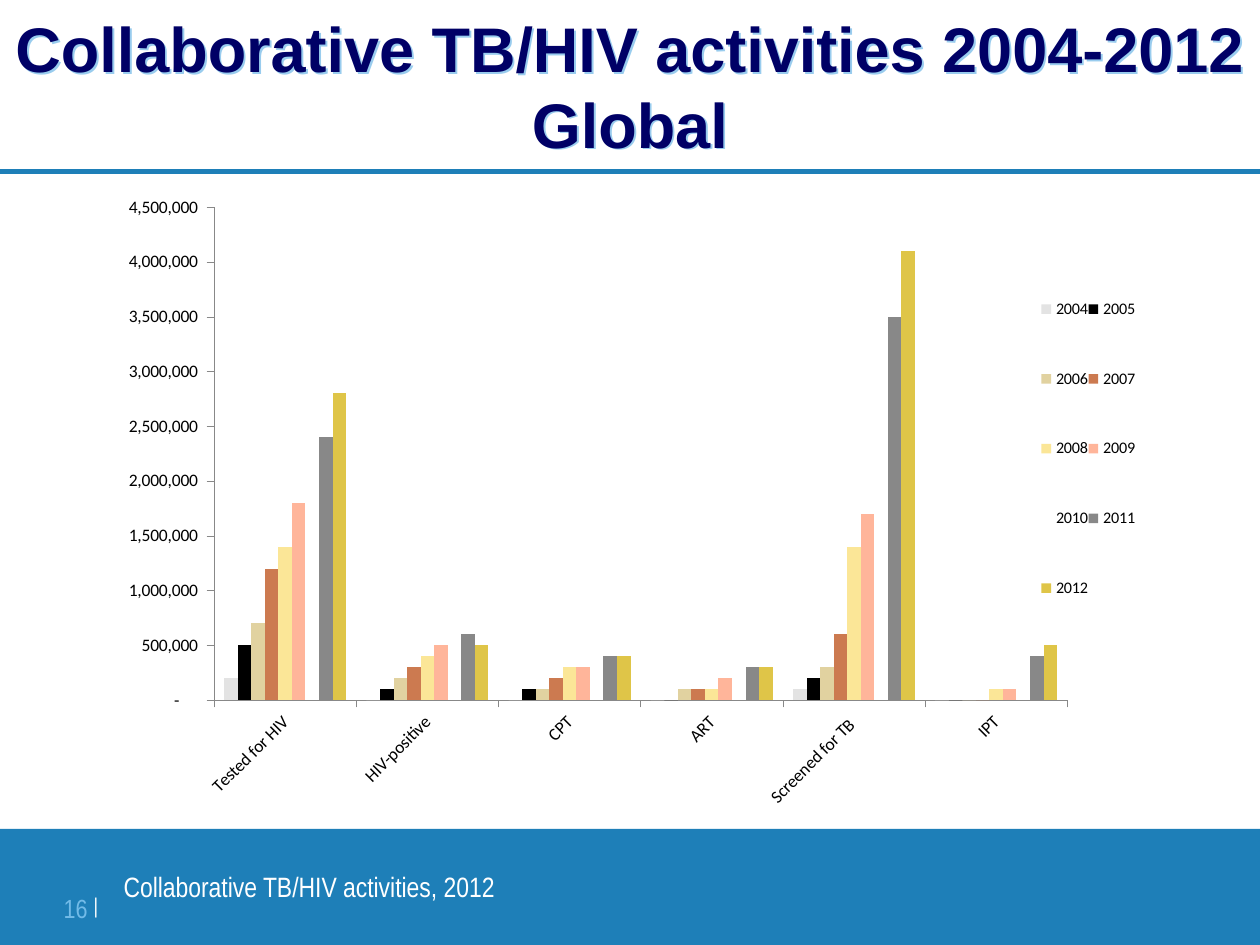
from dataclasses import dataclass
from typing import NamedTuple

from lxml.etree import SubElement
from pptx import Presentation
from pptx.chart.data import CategoryChartData
from pptx.dml.color import RGBColor
from pptx.enum.chart import XL_CHART_TYPE, XL_LEGEND_POSITION, XL_TICK_MARK
from pptx.enum.shapes import MSO_CONNECTOR, MSO_SHAPE
from pptx.enum.text import MSO_ANCHOR, MSO_AUTO_SIZE, PP_ALIGN
from pptx.oxml import parse_xml
from pptx.oxml.ns import nsdecls, qn
from pptx.util import Pt


@dataclass(frozen=True)
class Theme:
    band: str = "1E7FB8"
    title: str = "000066"
    title_shadow: str = "99CCEE"
    number: str = "72BBE8"
    white: str = "FFFFFF"
    ink: str = "000000"
    axis: str = "888888"
    title_font: str = "Arial"
    footer_font: str = "Arial Narrow"
    chart_font: str = "Calibri"
    title_size: float = 36
    footer_size: float = 16
    number_size: float = 15
    divider_size: float = 21
    chart_size: float = 10
    legend_size: float = 9.2


class Box(NamedTuple):
    left: float
    top: float
    width: float
    height: float


class TextRun(NamedTuple):
    text: str
    size: float
    color: str
    font: str
    bold: bool = False
    baseline: int = 0


class YearSeries(NamedTuple):
    year: str
    color: str
    hundred_thousands: tuple


THEME = Theme()
SLIDE_WIDTH, SLIDE_HEIGHT = 720, 540
CATEGORIES = ("Tested for HIV", "HIV-positive", "CPT", "ART", "Screened for TB ", "IPT")
NUMBER_FORMAT = '_(* #,##0_);_(* \\(#,##0\\);_(* "-"??_);_('
YEARS = (
    YearSeries("2004", "E3E3E3", (2, 0, 0, 0, 1, 0)),
    YearSeries("2005", "000000", (5, 1, 1, 0, 2, 0)),
    YearSeries("2006", "E1D2A0", (7, 2, 1, 1, 3, 0)),
    YearSeries("2007", "CC7A50", (12, 3, 2, 1, 6, 0)),
    YearSeries("2008", "FBE697", (14, 4, 3, 1, 14, 1)),
    YearSeries("2009", "FFB59A", (18, 5, 3, 2, 17, 1)),
    YearSeries("2010", "FFFFFF", (21, 5, 4, 2, 23, 2)),
    YearSeries("2011", "888888", (24, 6, 4, 3, 35, 4)),
    YearSeries("2012", "DFC548", (28, 5, 4, 3, 41, 5)),
)


def points(box: Box) -> list:
    return [Pt(value) for value in box]


def add_run(paragraph, item: TextRun) -> None:
    run = paragraph.add_run()
    run.text = item.text
    run.font.size = Pt(item.size)
    run.font.name = item.font
    run.font.bold = item.bold
    run.font.color.rgb = RGBColor.from_string(item.color)
    if item.baseline:
        run.font._element.set("baseline", str(item.baseline))


def clear_insets(frame) -> None:
    frame.margin_left = frame.margin_right = frame.margin_top = frame.margin_bottom = 0
    frame.word_wrap = True


def add_text(slide, box: Box, runs: tuple, alignment=PP_ALIGN.LEFT) -> None:
    frame = slide.shapes.add_textbox(*points(box)).text_frame
    clear_insets(frame)
    paragraph = frame.paragraphs[0]
    paragraph.alignment = alignment
    for item in runs:
        add_run(paragraph, item)


def add_bands(slide) -> None:
    rule = slide.shapes.add_connector(
        MSO_CONNECTOR.STRAIGHT, 0, Pt(98), Pt(SLIDE_WIDTH), Pt(98))
    rule.line.color.rgb = RGBColor.from_string(THEME.band)
    rule.line.width = Pt(3)
    SubElement(rule._element.spPr, qn("a:effectLst"))
    band = slide.shapes.add_shape(
        MSO_SHAPE.RECTANGLE, *points(Box(0, 473.6, SLIDE_WIDTH, 66.4)))
    band.shadow.inherit = False
    band.fill.solid()
    band.fill.fore_color.rgb = RGBColor.from_string(THEME.band)
    band.line.fill.background()


def format_title(title) -> None:
    title.left, title.top, title.width, title.height = points(Box(0, 0, SLIDE_WIDTH, 97.2))
    title.fill.background()
    frame = title.text_frame
    clear_insets(frame)
    frame.auto_size = MSO_AUTO_SIZE.NONE
    frame.vertical_anchor = MSO_ANCHOR.MIDDLE
    paragraph = frame.paragraphs[0]
    paragraph.alignment = PP_ALIGN.CENTER
    for index, line in enumerate(("Collaborative TB/HIV activities 2004-2012", "Global")):
        if index:
            paragraph.add_line_break()
        add_run(paragraph, TextRun(
            line, THEME.title_size, THEME.title, THEME.title_font, True))
    # With no fill on the box, the shadow falls from the letters
    title._element.spPr.append(parse_xml(
        f'<a:effectLst {nsdecls("a")}><a:outerShdw dist="{Pt(1.6)}" dir="2700000">'
        f'<a:srgbClr val="{THEME.title_shadow}"/></a:outerShdw></a:effectLst>'))


def style_font(font, size: float) -> None:
    font.size = Pt(size)
    font.name = THEME.chart_font
    font.color.rgb = RGBColor.from_string(THEME.ink)


def manual_layout(box: Box, inner: bool = False):
    """Chart layout given as fractions of the chart area."""
    target = '<c:layoutTarget val="inner"/>' if inner else ""
    values = "".join(f'<c:{name} val="{value}"/>' for name, value in zip("xywh", box))
    return parse_xml(
        f'<c:layout {nsdecls("c")}><c:manualLayout>{target}<c:xMode val="edge"/>'
        f'<c:yMode val="edge"/>{values}</c:manualLayout></c:layout>')


def add_activity_chart(slide) -> None:
    data = CategoryChartData()
    data.categories = CATEGORIES
    for item in YEARS:
        data.add_series(item.year, [value * 100_000 for value in item.hundred_thousands])
    chart = slide.shapes.add_chart(
        XL_CHART_TYPE.COLUMN_CLUSTERED, *points(Box(59.8, 105.8, 601.2, 362.9)), data).chart
    chart.has_title = False
    style_font(chart.font, THEME.chart_size)

    # Columns
    plot = chart.plots[0]
    plot.gap_width, plot.overlap, plot.vary_by_categories = 150, 0, False
    for series, item in zip(plot.series, YEARS):
        series.format.fill.solid()
        series.format.fill.fore_color.rgb = RGBColor.from_string(item.color)

    # Axes
    for axis in (chart.category_axis, chart.value_axis):
        axis.has_major_gridlines = False
        axis.major_tick_mark = XL_TICK_MARK.OUTSIDE
        axis.format.line.color.rgb = RGBColor.from_string(THEME.axis)
        axis.format.line.width = Pt(0.25)
        style_font(axis.tick_labels.font, THEME.chart_size)
    chart.category_axis._element.find(qn("c:txPr")).find(qn("a:bodyPr")).set("rot", "-2700000")
    values = chart.value_axis
    values.minimum_scale, values.maximum_scale, values.major_unit = 0, 4500000, 500000
    values.tick_labels.number_format = NUMBER_FORMAT
    values.tick_labels.number_format_is_linked = False

    # Legend and plot area positions
    chart.has_legend = True
    legend = chart.legend
    legend.position = XL_LEGEND_POSITION.RIGHT
    legend.include_in_layout = False
    style_font(legend.font, THEME.legend_size)
    legend._element.find(qn("c:legendPos")).addnext(manual_layout(Box(0.89, 0.1, 0.09, 0.63)))
    plot_area = chart._chartSpace.chart.plotArea
    for layout in plot_area.findall(qn("c:layout")):
        plot_area.remove(layout)
    plot_area.insert(0, manual_layout(Box(0.104, 0.035, 0.811, 0.776), inner=True))


def main() -> None:
    presentation = Presentation()
    presentation.slide_width, presentation.slide_height = Pt(SLIDE_WIDTH), Pt(SLIDE_HEIGHT)
    slide = presentation.slides.add_slide(presentation.slide_layouts[5])
    add_bands(slide)
    # Footer text and page number
    add_text(slide, Box(70.6, 496.8, 334, 33.8), (
        TextRun("Collaborative TB/HIV activities, 2012", THEME.footer_size,
                THEME.white, THEME.footer_font),))
    add_text(slide, Box(28, 504, 28, 26), (
        TextRun("16 ", THEME.number_size, THEME.number, THEME.footer_font),
        TextRun("|", THEME.divider_size, THEME.white, THEME.footer_font, baseline=14000),
    ), PP_ALIGN.RIGHT)
    format_title(slide.shapes.title)
    add_activity_chart(slide)
    presentation.save("out.pptx")


if __name__ == "__main__":
    main()
